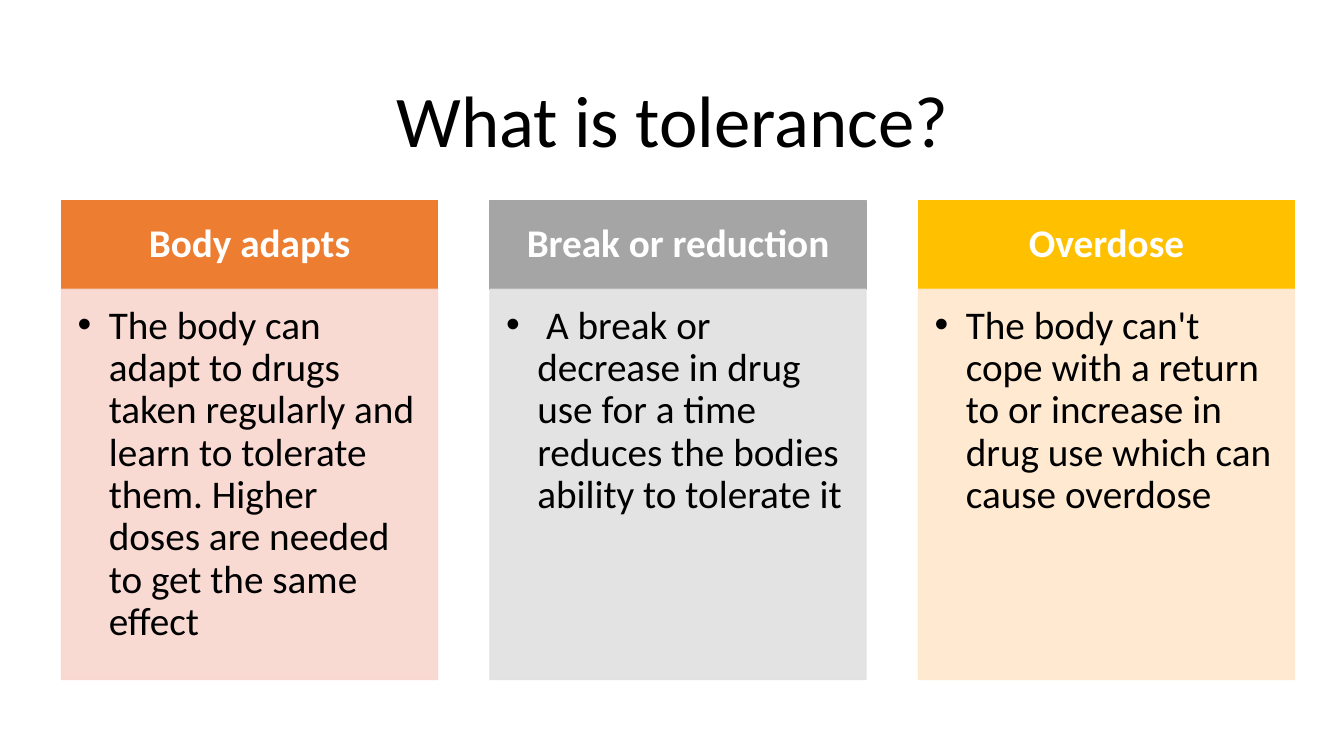
from lxml.etree import SubElement
from pptx import Presentation
from pptx.dml.color import RGBColor
from pptx.enum.shapes import MSO_SHAPE as Shape
from pptx.enum.text import MSO_ANCHOR as Anchor, PP_ALIGN as Align
from pptx.oxml.ns import qn
from pptx.util import Inches, Pt

BLACK = RGBColor(0x00, 0x00, 0x00)
WHITE = RGBColor(0xFF, 0xFF, 0xFF)
ORANGE = RGBColor(0xED, 0x7D, 0x31)
PALE_ORANGE = RGBColor(0xF8, 0xD7, 0xCE)
GREY = RGBColor(0xA5, 0xA5, 0xA5)
PALE_GREY = RGBColor(0xE1, 0xE1, 0xE1)
GOLD = RGBColor(0xFF, 0xC0, 0x00)
PALE_GOLD = RGBColor(0xFF, 0xE8, 0xCC)

FONT = "Calibri"
GRID_LEFT, COLUMN_WIDTH, COLUMN_STEP = 0.61, 3.73, 4.25
HEADER_TOP, HEADER_HEIGHT, BODY_HEIGHT = 1.99, 0.88, 3.87
HEADER_INSETS = (0.22, 0.12, 0.22, 0.12)
BODY_INSETS = (0.16, 0.16, 0.22, 0.24)
BULLET_INDENT = 0.31

STAGES = [
    ("Body adapts", ORANGE, PALE_ORANGE,
     "The body can adapt to drugs taken regularly and learn to tolerate them. "
     "Higher doses are needed to get the same effect"),
    ("Break or reduction", GREY, PALE_GREY,
     " A break or decrease in drug use for a time reduces the bodies "
     "ability to tolerate it"),
    ("Overdose", GOLD, PALE_GOLD,
     "The body can't cope with a return to or increase in drug use "
     "which can cause overdose"),
]


def add_bullet(para):
    props = para._p.get_or_add_pPr()
    props.set("marL", str(Inches(BULLET_INDENT)))
    props.set("indent", str(-Inches(BULLET_INDENT)))
    SubElement(props, qn("a:buFont")).set("typeface", "Arial")
    SubElement(props, qn("a:buChar")).set("char", "•")


def write(shape, text, size=28, color=BLACK, bold=False, align=Align.CENTER,
          anchor=Anchor.MIDDLE, insets=(0.1, 0.05, 0.1, 0.05), bullet=False):
    frame = shape.text_frame
    frame.word_wrap = True
    frame.vertical_anchor = anchor
    (frame.margin_left, frame.margin_top,
     frame.margin_right, frame.margin_bottom) = map(Inches, insets)
    para = frame.paragraphs[0]
    para.alignment = align
    para.line_spacing = 0.9
    if bullet:
        add_bullet(para)
    span = para.add_run()
    span.text = text
    span.font.name = FONT
    span.font.size = Pt(size)
    span.font.bold = bold
    span.font.color.rgb = color


def add_panel(page, column, top, height, color, opacity=100):
    left = GRID_LEFT + column * COLUMN_STEP
    panel = page.shapes.add_shape(
        Shape.RECTANGLE, *map(Inches, (left, top, COLUMN_WIDTH, height)))
    panel.shadow.inherit = False
    panel.fill.solid()
    panel.fill.fore_color.rgb = color
    panel.line.color.rgb = color
    panel.line.width = Pt(1)
    if opacity < 100:
        for tint in panel._element.spPr.iter(qn("a:srgbClr")):
            SubElement(tint, qn("a:alpha")).set("val", str(opacity * 1000))
    return panel


def add_stage(page, column, heading, color, pale_color, detail):
    header = add_panel(page, column, HEADER_TOP, HEADER_HEIGHT, color)
    write(header, heading, color=WHITE, bold=True, insets=HEADER_INSETS)
    body = add_panel(page, column, HEADER_TOP + HEADER_HEIGHT, BODY_HEIGHT,
                     pale_color, opacity=90)
    write(body, detail, align=Align.LEFT, anchor=Anchor.TOP,
          insets=BODY_INSETS, bullet=True)


def main():
    deck = Presentation()
    deck.slide_width, deck.slide_height = Inches(13.33), Inches(7.5)
    page = deck.slides.add_slide(deck.slide_layouts[6])
    title = page.shapes.add_textbox(*map(Inches, (0.92, 0.61, 11.5, 1.24)))
    write(title, "What is tolerance?", size=52)
    for column, stage in enumerate(STAGES):
        add_stage(page, column, *stage)
    deck.save("out.pptx")


if __name__ == "__main__":
    main()
